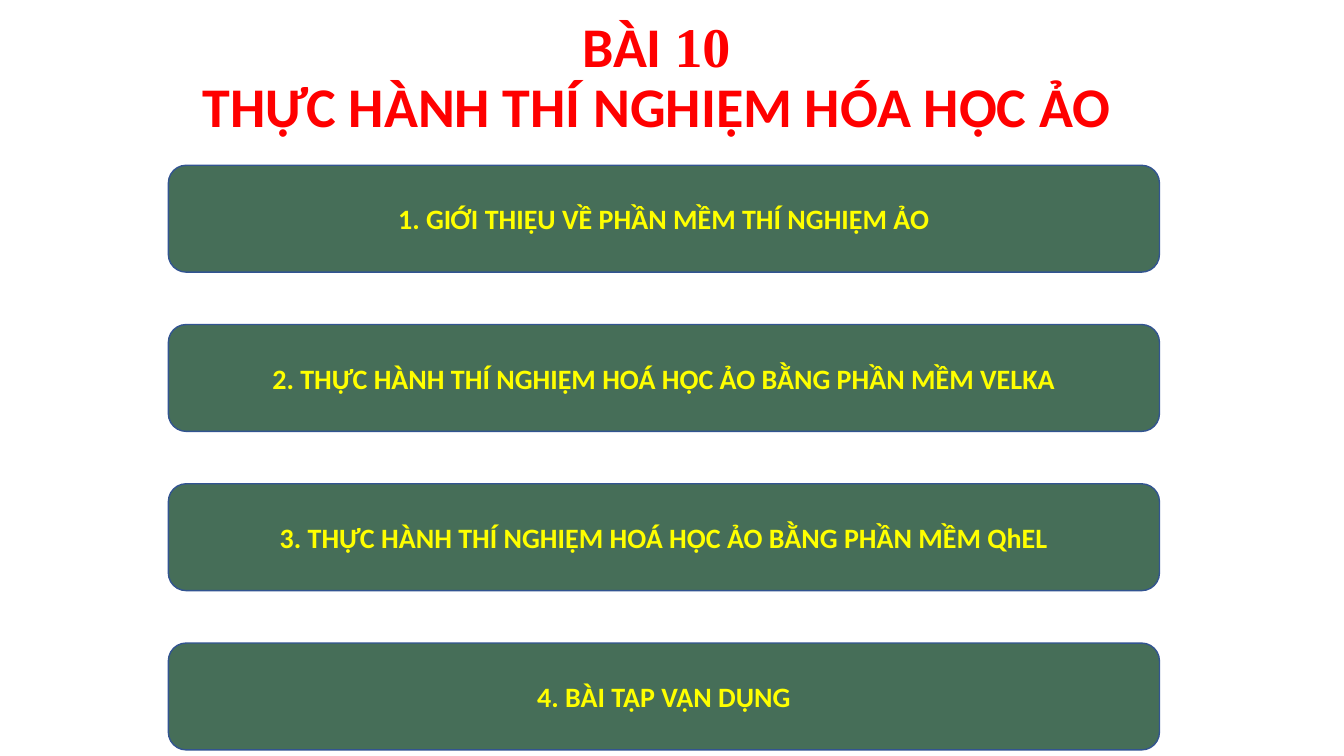
from copy import deepcopy

from pptx import Presentation
from pptx.dml.color import RGBColor
from pptx.enum.shapes import MSO_SHAPE as SHAPE
from pptx.enum.text import MSO_ANCHOR as ANCHOR, MSO_AUTO_SIZE as AUTOSIZE, PP_ALIGN as ALIGN
from pptx.util import Inches, Pt

SECTIONS = [
    "1. GIỚI THIỆU VỀ PHẦN MỀM THÍ NGHIỆM ẢO",
    "2. THỰC HÀNH THÍ NGHIỆM HOÁ HỌC ẢO BẰNG PHẦN MỀM VELKA",
    "3. THỰC HÀNH THÍ NGHIỆM HOÁ HỌC ẢO BẰNG PHẦN MỀM QhEL",
    "4. BÀI TẬP VẬN DỤNG",
]
LEFT, TOP, WIDTH, HEIGHT = 1.67, 1.64, 9.83, 1.06
ROW_PITCH = 1.58


def rgb(value):
    return RGBColor.from_string(value)


def format_run(r, size, color, font="Calibri"):
    r.font.size = Pt(size)
    r.font.bold = True
    r.font.name = font
    r.font.color.rgb = rgb(color)


def place(sp, left, top, width, height):
    sp.left, sp.top = Inches(left), Inches(top)
    sp.width, sp.height = Inches(width), Inches(height)


def add_title(s):
    sp = s.shapes.title
    place(sp, 0.79, 0.06, 11.44, 1.38)
    tf = sp.text_frame
    tf.auto_size = AUTOSIZE.NONE
    tf.word_wrap = True
    tf.vertical_anchor = ANCHOR.BOTTOM
    p = tf.paragraphs[0]
    p.alignment = ALIGN.CENTER
    p.line_spacing = 0.9

    def add_part(text, font="Calibri"):
        r = p.add_run()
        r.text = text
        format_run(r, 40, "FF0000", font)
        return r

    add_part("BÀI ")
    number = add_part("10", "Times New Roman")
    p.add_line_break()
    # The break needs the run's size to keep the line height
    p._p[-1].append(deepcopy(number.font._element))
    add_part("THỰC HÀNH THÍ NGHIỆM HÓA HỌC ẢO")


def add_section(s, row, text):
    sp = s.shapes.add_shape(SHAPE.FLOWCHART_ALTERNATE_PROCESS, 0, 0, 0, 0)
    place(sp, LEFT, TOP + row * ROW_PITCH, WIDTH, HEIGHT)
    sp.shadow.inherit = False
    sp.fill.solid()
    sp.fill.fore_color.rgb = rgb("466E58")
    sp.line.color.rgb = rgb("325491")
    sp.line.width = Pt(1)
    tf = sp.text_frame
    tf.text = text
    tf.word_wrap = True
    tf.vertical_anchor = ANCHOR.MIDDLE
    p = tf.paragraphs[0]
    p.alignment = ALIGN.CENTER
    format_run(p.runs[0], 20, "FFFF00")


def main():
    prs = Presentation()
    prs.slide_width, prs.slide_height = Inches(13.33), Inches(7.5)
    title_only = prs.slide_layouts[5]
    s = prs.slides.add_slide(title_only)
    add_title(s)
    for row, text in enumerate(SECTIONS):
        add_section(s, row, text)
    prs.save("out.pptx")


if __name__ == "__main__":
    main()
